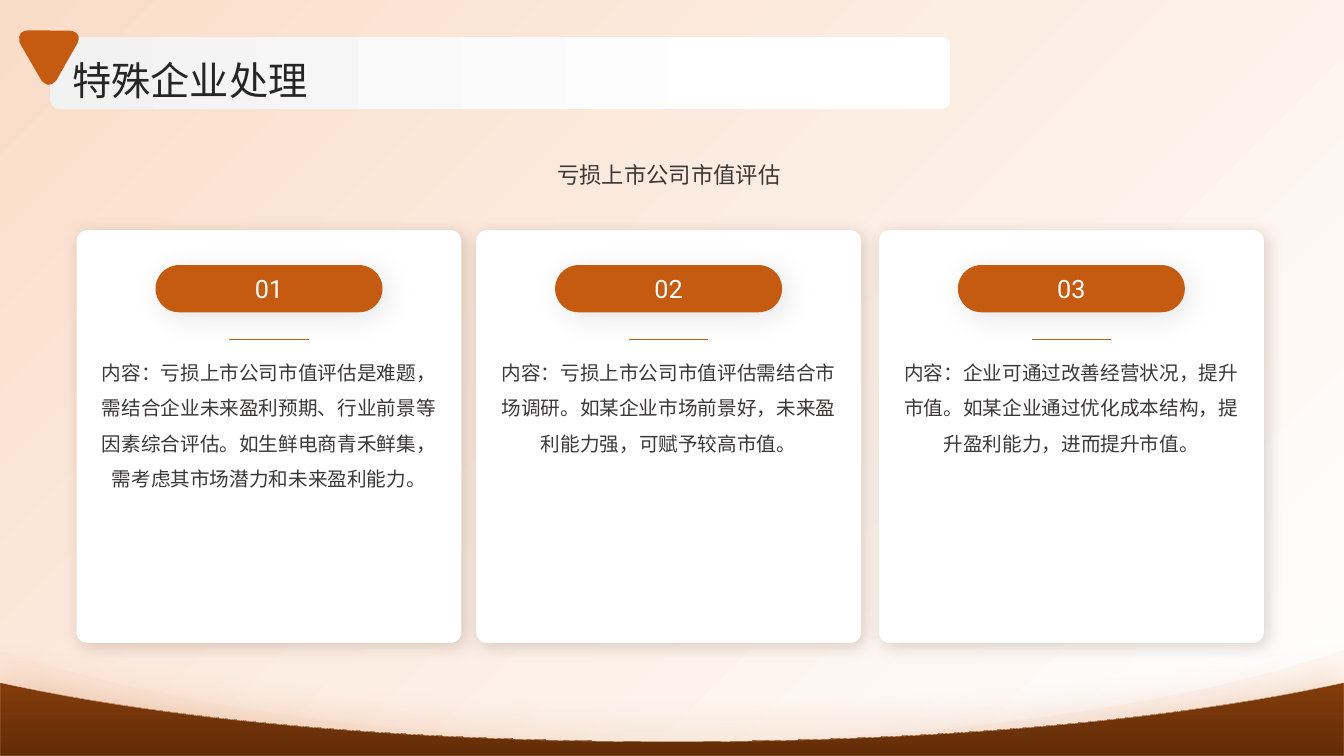
from lxml import etree
from pptx import Presentation
from pptx import util as u
from pptx.dml.color import RGBColor
from pptx.enum import shapes, text
from pptx.oxml.ns import qn

# Content
TITLE = "特殊企业处理"
SUBTITLE = "亏损上市公司市值评估"
CARDS = [
    ("01", "内容：亏损上市公司市值评估是难题，需结合企业未来盈利预期、行业前景等因素综合评估。"
           "如生鲜电商青禾鲜集，需考虑其市场潜力和未来盈利能力。"),
    ("02", "内容：亏损上市公司市值评估需结合市场调研。如某企业市场前景好，未来盈利能力强，可赋予较高市值。"),
    ("03", "内容：企业可通过改善经营状况，提升市值。如某企业通过优化成本结构，提升盈利能力，进而提升市值。"),
]

# Theme: colours, type, shadows (colour, alpha %, blur pt, distance pt, angle)
CJK, LATIN = "Noto Sans CJK SC", "Roboto"
THEME = {
    "white": "FFFFFF", "peach": "FADDC9", "accent": "C55A11",
    "brown": "833C0B", "dark_brown": "622D08", "grey": "F2F2F2",
    "title": {"size": 28, "name": CJK, "color": "262626", "spacing": 1.1},
    "subtitle": {"size": 16, "name": CJK, "color": "3B3838", "spacing": 1.3},
    "body": {"size": 14, "name": CJK, "color": "3B3838", "spacing": 1.5},
    "number": {"size": 18, "name": LATIN, "color": "FFFFFF", "spacing": 1.0},
    "card_shadow": ("421E05", 19, 12, 3, 45),
    "pill_shadow": ("000000", 10, 20, 5, 45),
    "wave_shadow": ("C55A11", 26, 29, 3, 270),
}

# Layout in cm
W, H = 33.87, 19.05
CARD_LEFTS = [1.93, 12.0, 22.15]
CARD_TOP, CARD_W, CARD_H = 5.8, 9.7, 10.4
PILL_TOP, PILL_W, PILL_H = 6.68, 5.72, 1.19
RULE_Y, RULE_W = 8.56, 2.0
BODY_TOP, BODY_W, BODY_H = 8.8, 8.74, 7.19
# Each wave: edge height, control height, lowest height
BACK_WAVE, FRONT_WAVE = (16.39, 17.81, 18.67), (17.2, 18.14, 18.69)
# Rounded triangle around its centre: a point is a straight end, a triple a curve
MARKER_FRAME, MARKER_TURN = (0.61, 0.53, 1.5, 1.38), 60
MARKER = [(-0.72, 0.34), (-0.18, -0.58),
          ((-0.18, -0.58), (0, -0.83), (0.18, -0.58)), (0.72, 0.34),
          ((0.72, 0.34), (0.86, 0.62), (0.55, 0.68)), (-0.55, 0.68),
          ((-0.55, 0.68), (-0.86, 0.62), (-0.72, 0.34))]

prs = Presentation()
prs.slide_width, prs.slide_height = u.Cm(W), u.Cm(H)
slide = prs.slides.add_slide(prs.slide_layouts[6])


def rgb(value):
    return RGBColor.from_string(value)


def set_shadow(sp, color, alpha, blur, dist, angle):
    effects = sp._element.spPr.find(qn("a:effectLst"))
    outer = etree.SubElement(effects, qn("a:outerShdw"), blurRad=str(u.Pt(blur)),
                             dist=str(u.Pt(dist)), dir=str(angle * 60000), rotWithShape="0")
    clr = etree.SubElement(outer, qn("a:srgbClr"), val=color)
    etree.SubElement(clr, qn("a:alpha"), val=str(alpha * 1000))


def style(sp, fill, angle=0, line=None, shadow=None):
    """fill is a colour, or a list of two (position, colour) stops."""
    if isinstance(fill, str):
        sp.fill.solid()
        sp.fill.fore_color.rgb = rgb(fill)
    else:
        sp.fill.gradient()
        sp.fill.gradient_angle = angle
        for stop, (position, color) in zip(sp.fill.gradient_stops, fill):
            stop.position, stop.color.rgb = position, rgb(color)
    if line:
        sp.line.color.rgb, sp.line.width = rgb(line), u.Pt(0.25)
    else:
        sp.line.fill.background()
    sp.shadow.inherit = False
    if shadow:
        set_shadow(sp, *shadow)
    return sp


def add_box(kind, left, top, width, height, radius=None, **look):
    sp = slide.shapes.add_shape(kind, *map(u.Cm, (left, top, width, height)))
    if radius is not None:
        sp.adjustments[0] = radius
    return style(sp, **look)


def add_outline(parent, frame, segments, **look):
    """Build straight sides, then bend those given as curve triples."""
    left, top, width, height = frame
    ends = [s[-1] if isinstance(s[0], tuple) else s for s in segments]
    emu = [(u.Cm(x), u.Cm(y)) for x, y in ends]
    builder = parent.build_freeform(*emu[0])
    builder.add_line_segments(emu[1:], close=True)
    sp = builder.convert_to_shape()
    sp.left, sp.top, sp.width, sp.height = map(u.Cm, frame)
    outline = next(sp._element.iter(qn("a:path")))
    outline.set("w", str(u.Cm(width)))
    outline.set("h", str(u.Cm(height)))
    for side, seg in zip(list(outline), segments):
        curved = isinstance(seg[0], tuple)
        if curved:
            side.tag = qn("a:cubicBezTo")
        for pt in list(side):
            side.remove(pt)
        for x, y in (seg if curved else [seg]):
            etree.SubElement(side, qn("a:pt"), x=str(u.Cm(x - left)), y=str(u.Cm(y - top)))
    return style(sp, **look)


def add_wave(parent, edge, control, low, **look):
    lip = 0.05
    segments = [(0, edge), (lip, edge + 0.01),
                ((4.22, control), (10.24, low), (W / 2, low)),
                ((W - 10.24, low), (W - 4.22, control), (W - lip, edge + 0.01)),
                (W, edge), (W, H), (0, H)]
    return add_outline(parent, (0, edge, W, H - edge), segments, **look)


def write(sp, words, fmt, align=text.PP_ALIGN.CENTER, anchor=text.MSO_ANCHOR.TOP):
    tf = sp.text_frame
    frame = {"word_wrap": True, "vertical_anchor": anchor, "margin_left": 0,
             "margin_right": 0, "margin_top": 0, "margin_bottom": 0}
    for name, value in frame.items():
        setattr(tf, name, value)
    p = tf.paragraphs[0]
    p.alignment, p.line_spacing = align, fmt["spacing"]
    r = p.add_run()
    r.text = words
    for name, value in {"size": u.Pt(fmt["size"]), "name": fmt["name"]}.items():
        setattr(r.font, name, value)
    r.font.color.rgb = rgb(fmt["color"])
    etree.SubElement(r._r.get_or_add_rPr(), qn("a:ea"), typeface=fmt["name"])


def add_text(left, top, width, height, *args, **kwargs):
    write(slide.shapes.add_textbox(*map(u.Cm, (left, top, width, height))), *args, **kwargs)


RECT, ROUND = shapes.MSO_SHAPE.RECTANGLE, shapes.MSO_SHAPE.ROUNDED_RECTANGLE

# Background and waves
add_box(RECT, 0, 0, W, H, fill=[(0, THEME["white"]), (1, THEME["peach"])], angle=135)
waves = slide.shapes.add_group_shape().shapes
back = add_wave(waves, *BACK_WAVE, fill=THEME["peach"])
tint = back._element.spPr.find(qn("a:solidFill")).find(qn("a:srgbClr"))
etree.SubElement(tint, qn("a:alpha"), val="18000")
add_wave(waves, *FRONT_WAVE, fill=[(0, THEME["brown"]), (1, THEME["dark_brown"])],
         angle=270, line=THEME["peach"], shadow=THEME["wave_shadow"])

# Cards
for left, (number, body) in zip(CARD_LEFTS, CARDS):
    center = left + CARD_W / 2
    add_box(ROUND, left, CARD_TOP, CARD_W, CARD_H, 0.028, fill=THEME["white"],
            shadow=THEME["card_shadow"])
    pill = add_box(ROUND, center - PILL_W / 2, PILL_TOP, PILL_W, PILL_H, 0.5,
                   fill=THEME["accent"], shadow=THEME["pill_shadow"])
    write(pill, number, THEME["number"], anchor=text.MSO_ANCHOR.MIDDLE)
    rule = slide.shapes.add_connector(
        shapes.MSO_CONNECTOR.STRAIGHT, u.Cm(center - RULE_W / 2), u.Cm(RULE_Y),
        u.Cm(center + RULE_W / 2), u.Cm(RULE_Y))
    rule.line.color.rgb, rule.line.width = rgb(THEME["accent"]), u.Pt(0.5)
    etree.SubElement(rule._element.spPr, qn("a:effectLst"))
    add_text(center - BODY_W / 2, BODY_TOP, BODY_W, BODY_H, body, THEME["body"])

# Subtitle and title bar
add_text(3.73, 3.86, 26.26, 1.4, SUBTITLE, THEME["subtitle"])
add_box(ROUND, 1.26, 0.93, 22.7, 1.82, 0.139,
        fill=[(0, THEME["grey"]), (0.8, THEME["white"])])
add_text(1.83, 1.3, 29.64, 1.3, TITLE, THEME["title"], align=text.PP_ALIGN.LEFT,
         anchor=text.MSO_ANCHOR.MIDDLE)

# Title marker
x0, y0 = MARKER_FRAME[0] + MARKER_FRAME[2] / 2, MARKER_FRAME[1] + MARKER_FRAME[3] / 2
placed = [tuple((x0 + x, y0 + y) for x, y in s) if isinstance(s[0], tuple)
          else (x0 + s[0], y0 + s[1]) for s in MARKER]
marker = add_outline(slide.shapes, MARKER_FRAME, placed, fill=THEME["accent"])
marker.rotation = MARKER_TURN

prs.save("out.pptx")
